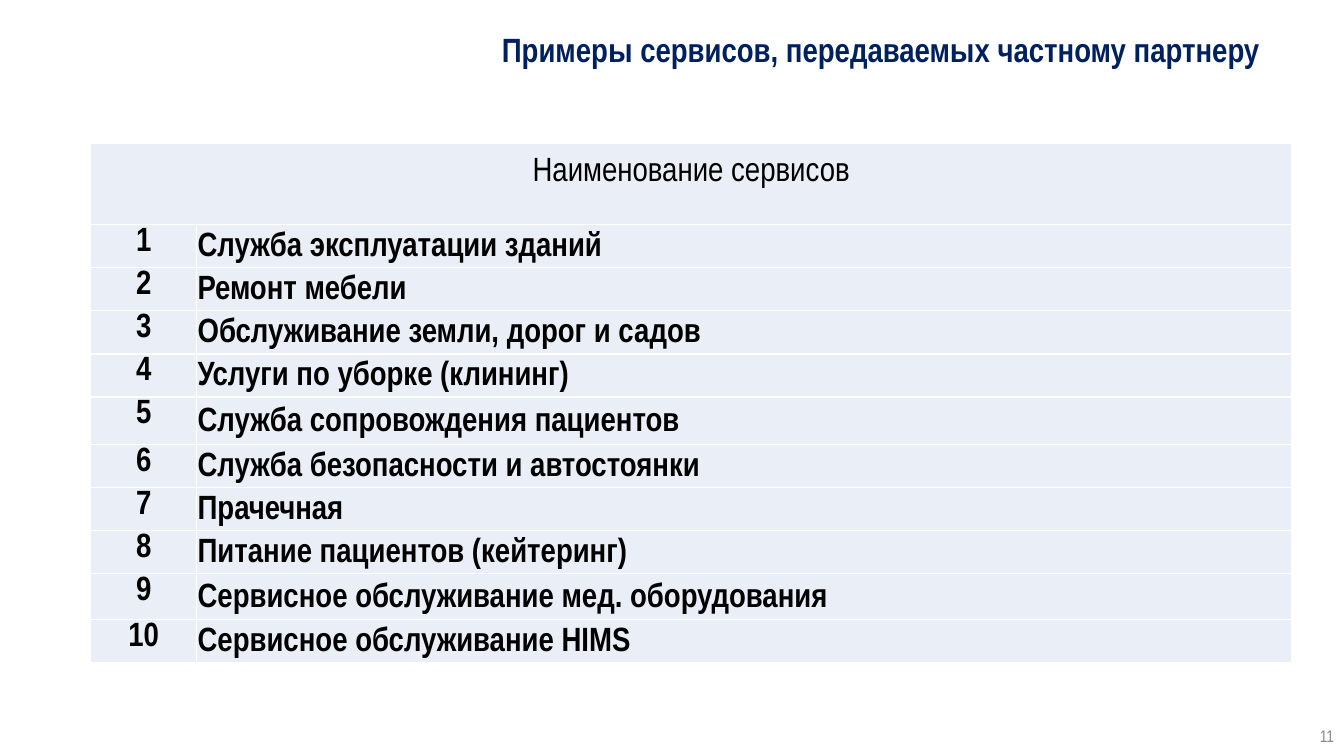
from dataclasses import dataclass

from lxml.etree import SubElement
from pptx import Presentation
from pptx.dml.color import RGBColor
from pptx.enum.text import MSO_ANCHOR as Anchor, PP_ALIGN as Align
from pptx.oxml.ns import qn
from pptx.util import Inches, Pt

HEADLINE = "Примеры сервисов, передаваемых частному партнеру"
TABLE_HEADING = "Наименование сервисов"
SERVICES = [
    "Служба эксплуатации зданий",
    "Ремонт мебели",
    "Обслуживание земли, дорог и садов",
    "Услуги по уборке (клининг)",
    "Служба сопровождения пациентов",
    "Служба безопасности и автостоянки",
    "Прачечная",
    "Питание пациентов (кейтеринг)",
    "Сервисное обслуживание мед. оборудования",
    "Сервисное обслуживание HIMS",
]
PAGE = "11"

SLIDE_SIZE = (13.33, 7.5)
HEADLINE_BOX = (4.41, 0.07, 8.8, 0.89)
HEADLINE_ROUNDING = 0.3
PAGE_BOX = (10.89, 7.1, 2.44, 0.4)
TABLE_BOX = (0.9, 1.42, 11.91, 5.16)
NUMBER_COLUMN = 1.05
HEADING_ROW = 0.81
TALL_ROWS = {5: 0.47, 9: 0.46}


@dataclass(frozen=True)
class Theme:
    font: str = "Arial Narrow"
    navy: str = "002060"
    black: str = "000000"
    grey: str = "888888"
    cell: str = "EAEFF7"
    border: str = "FFFFFF"
    main: int = 24
    small: int = 12


THEME = Theme()


def write(frame, text, color, size=THEME.main, bold=False, align=Align.LEFT, spacing=1.0):
    frame.text = text
    paragraph = frame.paragraphs[0]
    paragraph.alignment = align
    paragraph.line_spacing = spacing
    font = paragraph.runs[0].font
    font.name, font.size, font.bold = THEME.font, Pt(size), bold
    font.color.rgb = RGBColor.from_string(color)
    return paragraph


def set_margins(target, left, top, right, bottom):
    target.margin_left, target.margin_top = Inches(left), Inches(top)
    target.margin_right, target.margin_bottom = Inches(right), Inches(bottom)


def round_corners(shape, share):
    geometry = SubElement(shape.element.spPr, qn("a:prstGeom"), prst="roundRect")
    guides = SubElement(geometry, qn("a:avLst"))
    SubElement(guides, qn("a:gd"), name="adj", fmla=f"val {round(share * 100000)}")


def add_borders(cell):
    properties = cell._tc.get_or_add_tcPr()
    for side in ("a:lnL", "a:lnR", "a:lnT", "a:lnB"):
        line = SubElement(properties, qn(side), w=str(Pt(1)))
        fill = SubElement(line, qn("a:solidFill"))
        SubElement(fill, qn("a:srgbClr"), val=THEME.border)


def fill_cell(cell, text, margins, anchor=Anchor.TOP, bold=True, align=Align.CENTER):
    write(cell.text_frame, text, THEME.black, bold=bold, align=align, spacing=1.07)
    set_margins(cell, *margins)
    cell.vertical_anchor = anchor


def add_headline(slide):
    title = slide.shapes.title
    title.left, title.top, title.width, title.height = map(Inches, HEADLINE_BOX)
    round_corners(title, HEADLINE_ROUNDING)
    title.fill.background()
    title.line.fill.background()
    frame = title.text_frame
    frame.word_wrap = True
    frame.vertical_anchor = Anchor.MIDDLE
    set_margins(frame, 0.05, 0.07, 0.2, 0.05)
    line = write(frame, HEADLINE, THEME.navy, bold=True, align=Align.CENTER, spacing=0.75)
    line.space_before = Pt(6)


def add_services(slide):
    left, top, width, height = TABLE_BOX
    columns = (NUMBER_COLUMN, width - NUMBER_COLUMN)
    plain_space = height - HEADING_ROW - sum(TALL_ROWS.values())
    plain_row = plain_space / (len(SERVICES) - len(TALL_ROWS))
    heights = [HEADING_ROW] + [TALL_ROWS.get(number, plain_row)
                               for number in range(1, len(SERVICES) + 1)]
    table = slide.shapes.add_table(
        len(heights), len(columns), *map(Inches, TABLE_BOX)).table
    for column, column_width in zip(table.columns, columns):
        column.width = Inches(column_width)
    for row, row_height in zip(table.rows, heights):
        row.height = Inches(row_height)
    for cell in table.iter_cells():
        add_borders(cell)
        cell.fill.solid()
        cell.fill.fore_color.rgb = RGBColor.from_string(THEME.cell)

    heading = table.cell(0, 0)
    heading.merge(table.cell(0, 1))
    fill_cell(heading, TABLE_HEADING, (0, 0.12, 0, 0), bold=False)
    for number, service in enumerate(SERVICES, 1):
        fill_cell(table.cell(number, 0), str(number), (0, 0, 0, 0))
        fill_cell(table.cell(number, 1), service, (0.01, 0.01, 0.01, 0),
                  Anchor.MIDDLE, align=Align.LEFT)


def add_page_number(slide):
    frame = slide.shapes.add_textbox(*map(Inches, PAGE_BOX)).text_frame
    frame.word_wrap = True
    frame.vertical_anchor = Anchor.MIDDLE
    write(frame, PAGE, THEME.grey, THEME.small, align=Align.RIGHT)


def main():
    deck = Presentation()
    deck.slide_width, deck.slide_height = map(Inches, SLIDE_SIZE)
    slide = deck.slides.add_slide(deck.slide_layouts.get_by_name("Title Only"))
    add_headline(slide)
    add_services(slide)
    add_page_number(slide)
    deck.save("out.pptx")


if __name__ == "__main__":
    main()
